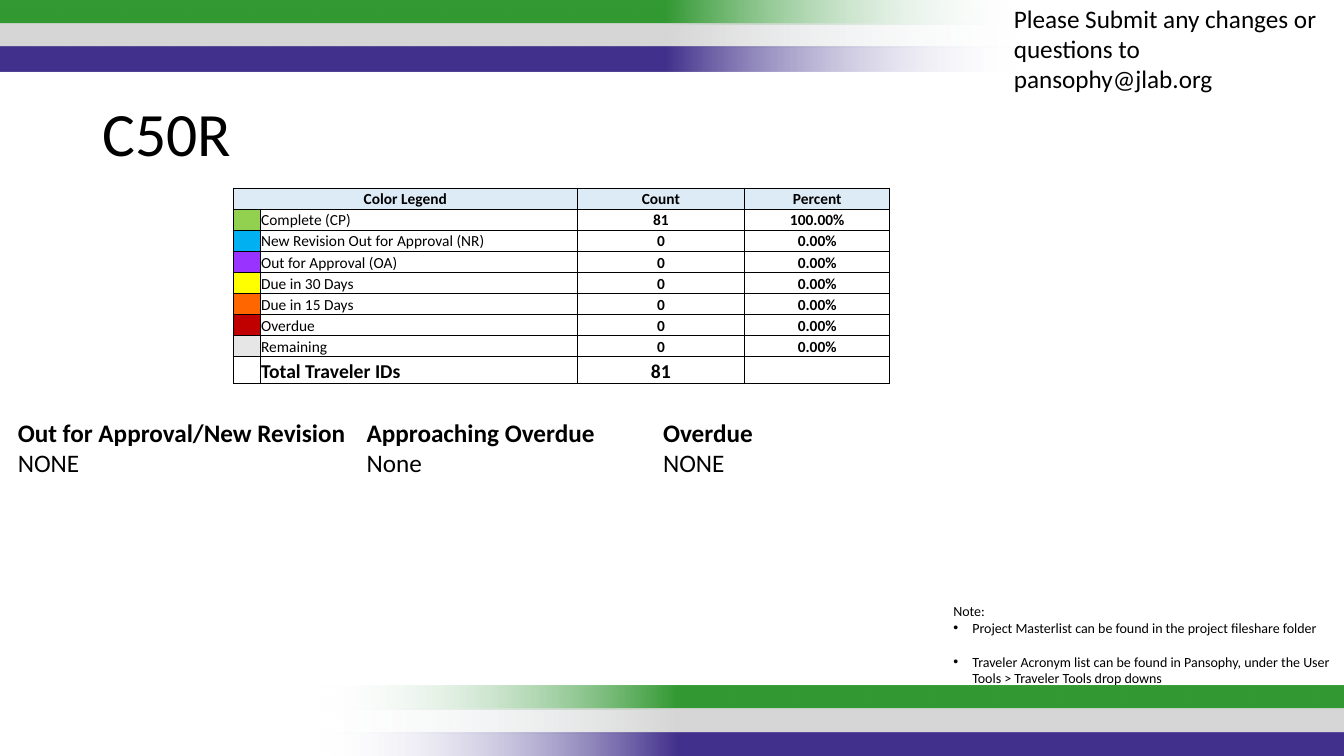
"""Build the C50R traveler status slide."""
from lxml.etree import SubElement, fromstring
from pptx import Presentation
from pptx.dml.color import RGBColor
from pptx.enum.shapes import MSO_SHAPE
from pptx.enum.text import MSO_ANCHOR, MSO_AUTO_SIZE, PP_ALIGN
from pptx.oxml.ns import nsdecls, qn
from pptx.util import Cm, Pt

COLORS = {
    "text": "000000", "fade": "F7FAFD", "header": "DDEBF7",
    "green": "339933", "gray": "D6D6D6", "purple": "42318C",
    "complete": "92D050", "revision": "00B0F0", "approval": "9933FF",
    "due30": "FFFF00", "due15": "FF6600", "overdue": "C00000", "remaining": "E7E6E6",
}


def apply_format(target, values):
    for name, value in values.items():
        setattr(target, name, value)


def write_line(paragraph, text, size, bold=False):
    run = paragraph.add_run()
    run.text = text
    apply_format(run.font, {"name": "Calibri", "size": Pt(size), "bold": bold})
    run.font.color.rgb = RGBColor.from_string(COLORS["text"])


deck = Presentation()
apply_format(deck, {"slide_width": Cm(33.87), "slide_height": Cm(19.05)})
slide = deck.slides.add_slide(deck.slide_layouts[1])

for left, top, rotation in [(-0.03, 0, 180), (8.06, 17.27, 0)]:
    for i, color in enumerate(["green", "gray", "purple"]):
        band = slide.shapes.add_shape(
            MSO_SHAPE.RECTANGLE, Cm(left), Cm(top + 0.59 * i), Cm(25.83), Cm(0.61))
        band.rotation = rotation
        band.shadow.inherit = False
        band.line.fill.background()
        gradient = fromstring(
            f'<a:gradFill {nsdecls("a")} rotWithShape="1"><a:gsLst>'
            f'<a:gs pos="0"><a:srgbClr val="{COLORS["fade"]}"><a:alpha val="0"/></a:srgbClr></a:gs>'
            f'<a:gs pos="35000"><a:srgbClr val="{COLORS[color]}"/></a:gs>'
            f'<a:gs pos="100000"><a:srgbClr val="{COLORS[color]}"/></a:gs>'
            '</a:gsLst><a:lin ang="0" scaled="0"/></a:gradFill>')
        band.element.spPr.find(qn("a:prstGeom")).addnext(gradient)

title = slide.shapes.title
apply_format(title, {"left": Cm(2.33), "top": Cm(2.18), "width": Cm(29.21), "height": Cm(2.51)})
apply_format(title.text_frame, {
    "vertical_anchor": MSO_ANCHOR.MIDDLE, "word_wrap": True, "auto_size": MSO_AUTO_SIZE.NONE})
heading = title.text_frame.paragraphs[0]
apply_format(heading, {"alignment": PP_ALIGN.LEFT, "line_spacing": 0.9})
write_line(heading, "C50R", 44)

legend_rows = [
    ("header", "Color Legend", "", "Count", "Percent"),
    ("complete", "", "Complete (CP)", "81", "100.00%"),
    ("revision", "", "New Revision Out for Approval (NR)", "0", "0.00%"),
    ("approval", "", "Out for Approval (OA)", "0", "0.00%"),
    ("due30", "", "Due in 30 Days", "0", "0.00%"),
    ("due15", "", "Due in 15 Days", "0", "0.00%"),
    ("overdue", "", "Overdue", "0", "0.00%"),
    ("remaining", "", "Remaining", "0", "0.00%"),
    (None, "", "Total Traveler IDs", "81", ""),
]
last = len(legend_rows) - 1
legend = slide.shapes.add_table(
    len(legend_rows), 4, Cm(5.89), Cm(4.74), Cm(16.53), Cm(4.92)).table
apply_format(legend, {"first_row": False, "horz_banding": False})
for column, width in zip(legend.columns, [0.67, 7.98, 4.23, 3.65]):
    column.width = Cm(width)
for r, (color, *values) in enumerate(legend_rows):
    legend.rows[r].height = Cm(0.68 if r == last else 0.53)
    size = 14 if r == last else 11
    for c, value in enumerate(values):
        cell = legend.cell(r, c)
        apply_format(cell, {
            "margin_left": Cm(0.02), "margin_right": Cm(0.02), "margin_top": Cm(0.02),
            "margin_bottom": 0, "vertical_anchor": MSO_ANCHOR.BOTTOM})
        if color and (r == 0 or c == 0):
            cell.fill.solid()
            cell.fill.fore_color.rgb = RGBColor.from_string(COLORS[color])
        else:
            cell.fill.background()
        paragraph = cell.text_frame.paragraphs[0]
        paragraph.alignment = PP_ALIGN.CENTER if r == 0 or c > 1 else PP_ALIGN.LEFT
        if value:
            write_line(paragraph, value, size, r in (0, last) or c > 1)
        else:
            SubElement(paragraph._p, qn("a:endParaRPr"), sz=str(size * 100))
        thick_sides = {"L": c == 0 and color != "overdue", "R": r == 0 and c == 3,
                       "T": r == 0, "B": r == last}
        for position, (side, thick) in enumerate(thick_sides.items()):
            border = fromstring(
                f'<a:ln{side} {nsdecls("a")} w="{Pt(1 if thick else 0.5)}"><a:solidFill>'
                f'<a:srgbClr val="{COLORS["text"]}"/></a:solidFill></a:ln{side}>')
            cell._tc.get_or_add_tcPr().insert(position, border)
legend.cell(0, 0).merge(legend.cell(0, 1))

text_blocks = [
    (0.2, 10.39, 8.76, 1.8, [("Out for Approval/New Revision", True), ("NONE", False)]),
    (8.99, 10.39, 7.49, 1.8, [("Approaching Overdue", True), ("None", False)]),
    (16.46, 10.39, 15.32, 2.57, [("Overdue", True), ("NONE", False)]),
    (25.3, -0.05, 8.59, 2.57,
     [("Please Submit any changes or questions to pansophy@jlab.org", False)]),
]
for left, top, width, height, lines in text_blocks:
    frame = slide.shapes.add_textbox(Cm(left), Cm(top), Cm(width), Cm(height)).text_frame
    apply_format(frame, {"word_wrap": True, "auto_size": MSO_AUTO_SIZE.SHAPE_TO_FIT_TEXT})
    for i, (text, bold) in enumerate(lines):
        write_line(frame.add_paragraph() if i else frame.paragraphs[0], text, 18, bold)

notes = slide.placeholders[1]
apply_format(notes, {"left": Cm(23.77), "top": Cm(15.06), "width": Cm(10.08), "height": Cm(2.39)})
apply_format(notes.text_frame, {
    "word_wrap": True, "auto_size": MSO_AUTO_SIZE.NONE, "vertical_anchor": MSO_ANCHOR.TOP})
note_lines = [
    ("Note:", False, 0),
    ("Project Masterlist can be found in the project fileshare folder", True, 0),
    ("Traveler Acronym list can be found in Pansophy, under the User Tools > "
     "Traveler Tools drop downs", True, 12),
]
for i, (text, bulleted, space) in enumerate(note_lines):
    paragraph = notes.text_frame.add_paragraph() if i else notes.text_frame.paragraphs[0]
    properties = paragraph._p.get_or_add_pPr()
    indent = Cm(0.48) if bulleted else 0
    properties.set("marL", str(indent))
    properties.set("indent", str(-indent))
    if bulleted:
        SubElement(properties, qn("a:buFont"), typeface="Arial")
        SubElement(properties, qn("a:buChar"), char="•")
    else:
        SubElement(properties, qn("a:buNone"))
    apply_format(paragraph, {"space_before": Pt(space), "alignment": PP_ALIGN.LEFT})
    write_line(paragraph, text, 10)

deck.save("out.pptx")
